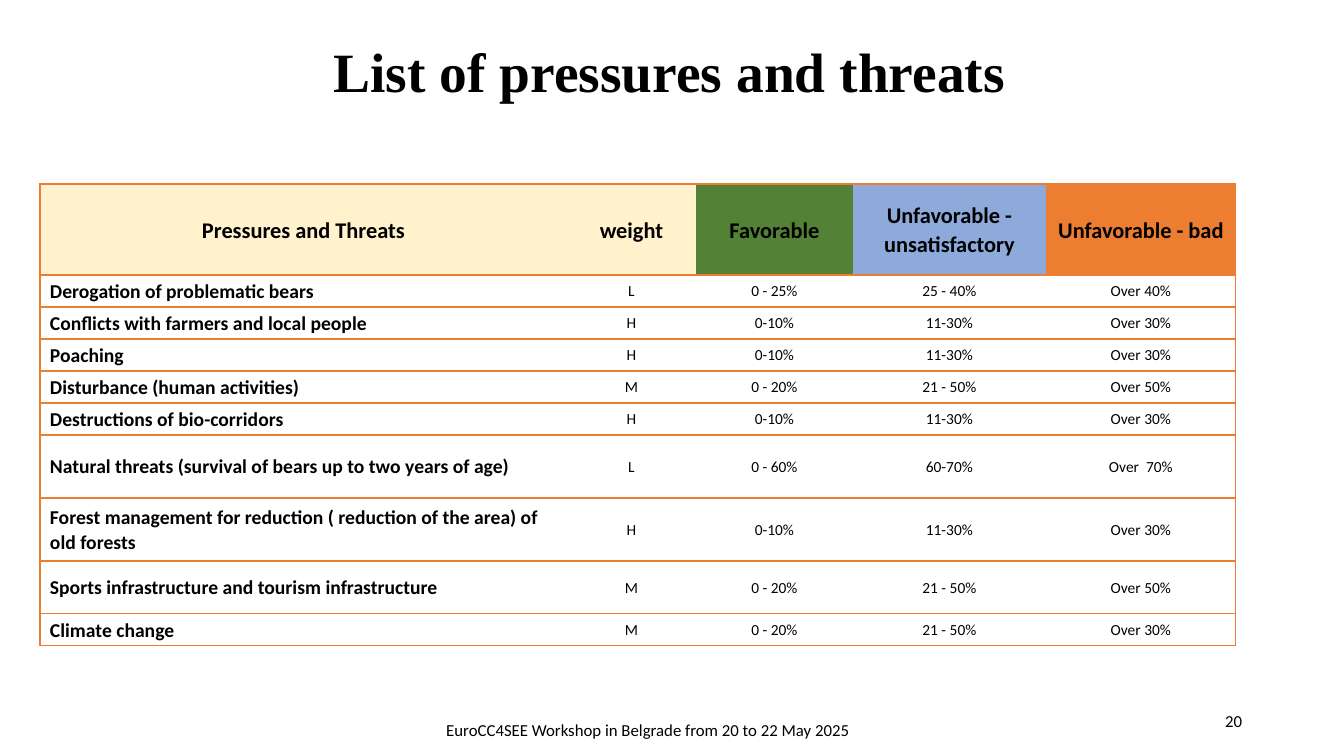
import pptx
import pptx.util
import pptx.dml.color
import pptx.enum.text
import pptx.oxml

PX = 914400 / 100.8
BLACK = pptx.dml.color.RGBColor(0x00, 0x00, 0x00)
CREAM = pptx.dml.color.RGBColor(0xFF, 0xF2, 0xCC)
GREEN = pptx.dml.color.RGBColor(0x53, 0x81, 0x35)
BLUE = pptx.dml.color.RGBColor(0x8E, 0xAA, 0xDB)
ORANGE = pptx.dml.color.RGBColor(0xED, 0x7D, 0x31)
LEFT = pptx.enum.text.PP_ALIGN.LEFT
CENTER = pptx.enum.text.PP_ALIGN.CENTER
RIGHT = pptx.enum.text.PP_ALIGN.RIGHT
MIDDLE = pptx.enum.text.MSO_ANCHOR.MIDDLE
NO_GRID_STYLE = "{2D5ABB26-0587-4C30-8999-92F81FD0307C}"
DRAWING_NS = "http://schemas.openxmlformats.org/drawingml/2006/main"


def px(length):
    return pptx.util.Emu(round(length * PX))


def write(frame, text, size, font="Calibri", bold=False, align=CENTER, spacing=1.0):
    frame.word_wrap = True
    paragraph = frame.paragraphs[0]
    paragraph.alignment = align
    paragraph.line_spacing = spacing
    run = paragraph.add_run()
    run.text = text
    run.font.size = pptx.util.Pt(size)
    run.font.name = font
    run.font.bold = bold
    run.font.color.rgb = BLACK


presentation = pptx.Presentation()
presentation.slide_width = px(1344)
presentation.slide_height = px(756)
slide = presentation.slides.add_slide(presentation.slide_layouts[6])

captions = [
    ((87, 40, 1165, 70), "List of pressures and threats",
     dict(size=39.6, font="Times New Roman", bold=True, spacing=0.9)),
    ((950, 701, 302, 40), "20", dict(size=12, align=RIGHT)),
    ((206, 719, 884, 22), "EuroCC4SEE Workshop in Belgrade from 20 to 22 May 2025",
     dict(size=12)),
]
for place, text, style in captions:
    frame = slide.shapes.add_textbox(*map(px, place)).text_frame
    frame.vertical_anchor = MIDDLE
    write(frame, text, **style)

headings = [
    ("Pressures and Threats", CREAM),
    ("weight", CREAM),
    ("Favorable", GREEN),
    ("Unfavorable - unsatisfactory", BLUE),
    ("Unfavorable - bad", ORANGE),
]
threats = [
    ("Derogation of problematic bears", "L", "0 - 25%", "25 - 40%", "Over 40%"),
    ("Conflicts with farmers and local people", "H", "0-10%", "11-30%", "Over 30%"),
    ("Poaching", "H", "0-10%", "11-30%", "Over 30%"),
    ("Disturbance (human activities)", "M", "0 - 20%", "21 - 50%", "Over 50%"),
    ("Destructions of bio-corridors", "H", "0-10%", "11-30%", "Over 30%"),
    ("Natural threats (survival of bears up to two years of age)",
     "L", "0 - 60%", "60-70%", "Over  70%"),
    ("Forest management for reduction ( reduction of the area) of old forests",
     "H", "0-10%", "11-30%", "Over 30%"),
    ("Sports infrastructure and tourism infrastructure",
     "M", "0 - 20%", "21 - 50%", "Over 50%"),
    ("Climate change", "M", "0 - 20%", "21 - 50%", "Over 30%"),
]
column_widths = [527, 129, 157, 193, 190]
row_heights = [91] + [32] * 5 + [63, 63, 53, 32]
last_column = len(column_widths) - 1

threat_table = slide.shapes.add_table(
    len(row_heights), len(column_widths),
    px(40), px(184), px(sum(column_widths)), px(sum(row_heights)),
).table
threat_table.horz_banding = False
threat_table._tbl.tblPr.find(f"{{{DRAWING_NS}}}tableStyleId").text = NO_GRID_STYLE
for column, width in zip(threat_table.columns, column_widths):
    column.width = px(width)
for row, height in zip(threat_table.rows, row_heights):
    row.height = px(height)

rows = [[label for label, color in headings]] + threats
for row_index, row in enumerate(rows):
    for column_index, text in enumerate(row):
        cell = threat_table.cell(row_index, column_index)
        cell.vertical_anchor = MIDDLE
        cell.margin_left = cell.margin_right = px(10)
        cell.margin_top = cell.margin_bottom = 0

        edges = ["T", "B"]
        if column_index == 0:
            edges = ["L"] + edges
        elif column_index == last_column:
            edges = ["R"] + edges
        for edge in edges:
            cell._tc.get_or_add_tcPr().append(pptx.oxml.parse_xml(
                f'<a:ln{edge} xmlns:a="{DRAWING_NS}" w="12700"><a:solidFill>'
                f'<a:srgbClr val="{ORANGE}"/></a:solidFill></a:ln{edge}>'
            ))

        if row_index == 0:
            cell.fill.solid()
            cell.fill.fore_color.rgb = headings[column_index][1]
            write(cell.text_frame, text, 16, bold=True, spacing=1.07)
        else:
            cell.fill.background()
            if column_index == 0:
                write(cell.text_frame, text, 14, bold=True, align=LEFT, spacing=1.07)
            else:
                write(cell.text_frame, text, 11, spacing=1.07)

presentation.save("out.pptx")
